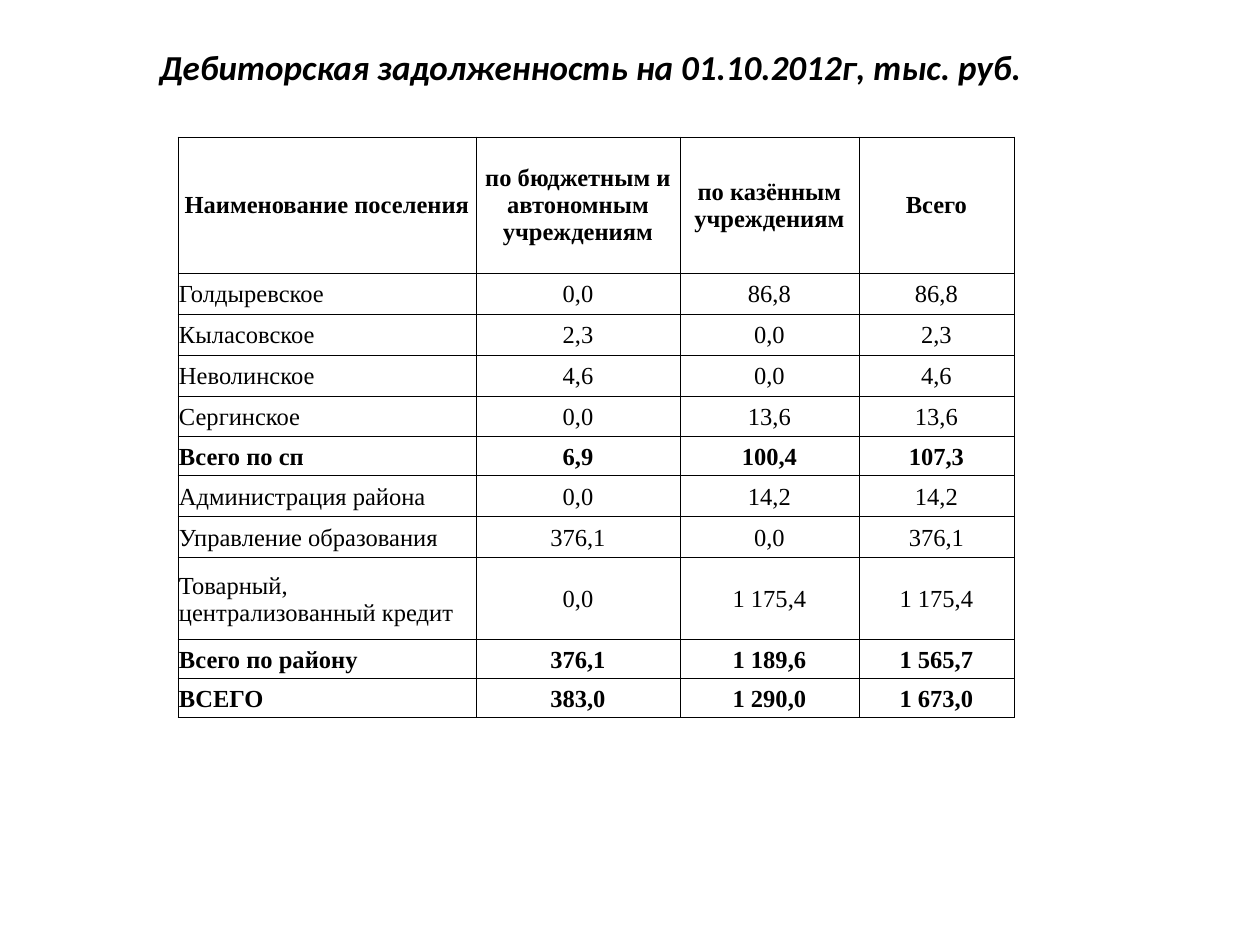
from dataclasses import dataclass

from lxml.etree import SubElement as Sub
from pptx import Presentation
from pptx.dml.color import RGBColor as RGB
from pptx.enum.text import MSO_ANCHOR as Anchor, PP_ALIGN as Align
from pptx.oxml.ns import qn
from pptx.util import Emu, Pt

SCALE = 914400 / 126  # EMU in one px


@dataclass(frozen=True)
class Theme:
    ink: str = "000000"
    paper: str = "FFFFFF"
    head_font: str = "Calibri"
    body_font: str = "Times New Roman"
    head_size: int = 20
    body_size: int = 14
    rule: float = 0.5


THEME = Theme()
TITLE = "Дебиторская задолженность на 01.10.2012г, тыс. руб."
COLS = [298, 204, 179, 155]
HEAD, LINE, SUM, TALL = 136, 41, 39, 82

# Row height, bold or not, texts
ROWS = [
    (HEAD, True, ["Наименование поселения", "по бюджетным и автономным учреждениям",
                  "по казённым учреждениям", "Всего"]),
    (LINE, False, ["Голдыревское", "0,0", "86,8", "86,8"]),
    (LINE, False, ["Кыласовское", "2,3", "0,0", "2,3"]),
    (LINE, False, ["Неволинское", "4,6", "0,0", "4,6"]),
    (LINE, False, ["Сергинское", "0,0", "13,6", "13,6"]),
    (SUM, True, ["Всего по сп", "6,9", "100,4", "107,3"]),
    (LINE, False, ["Администрация района", "0,0", "14,2", "14,2"]),
    (LINE, False, ["Управление образования", "376,1", "0,0", "376,1"]),
    (TALL, False, ["Товарный, централизованный кредит", "0,0", "1 175,4", "1 175,4"]),
    (SUM, True, ["Всего по району", "376,1", "1 189,6", "1 565,7"]),
    (SUM, True, ["ВСЕГО", "383,0", "1 290,0", "1 673,0"]),
]


def px(num):
    return Emu(round(num * SCALE))


def style(para, font, size, bold=False, slant=False):
    for run in para.runs:
        face = run.font
        face.name, face.size = font, Pt(size)
        face.bold, face.italic = bold, slant
        face.color.rgb = RGB.from_string(THEME.ink)


def add_title(slide, text, left, top, width, height):
    box = slide.shapes.add_textbox(px(left), px(top), px(width), px(height))
    frame = box.text_frame
    frame.word_wrap = True
    frame.text = text
    style(frame.paragraphs[0], THEME.head_font, THEME.head_size, True, True)


def add_rules(cell):
    props = cell._tc.get_or_add_tcPr()
    for side in ("lnL", "lnR", "lnT", "lnB"):
        edge = Sub(props, qn(f"a:{side}"), w=str(Pt(THEME.rule)))
        fill = Sub(edge, qn("a:solidFill"))
        Sub(fill, qn("a:srgbClr"), val=THEME.ink)


def fill_cell(cell, text, bold, align):
    cell.margin_left = cell.margin_right = cell.margin_top = px(1)
    cell.margin_bottom = 0
    cell.vertical_anchor = Anchor.MIDDLE
    add_rules(cell)
    cell.fill.solid()
    cell.fill.fore_color.rgb = RGB.from_string(THEME.paper)
    cell.text_frame.text = text
    para = cell.text_frame.paragraphs[0]
    para.alignment = align
    style(para, THEME.body_font, THEME.body_size, bold)


def add_grid(slide, left, top):
    high = sum(row[0] for row in ROWS)
    grid = slide.shapes.add_table(len(ROWS), len(COLS), px(left), px(top),
                                  px(sum(COLS)), px(high)).table
    grid.first_row = grid.horz_banding = False
    for col, width in zip(grid.columns, COLS):
        col.width = px(width)
    for r, (height, bold, texts) in enumerate(ROWS):
        grid.rows[r].height = px(height)
        for c, text in enumerate(texts):
            # Names below the header stand at the left
            align = Align.LEFT if r and not c else Align.CENTER
            fill_cell(grid.cell(r, c), text, bold, align)


def main():
    deck = Presentation()
    deck.slide_width, deck.slide_height = px(1260), px(945)
    slide = deck.slides.add_slide(deck.slide_layouts[6])
    add_title(slide, TITLE, 147, 39, 925, 55)
    add_grid(slide, 178, 137)
    deck.save("out.pptx")


if __name__ == "__main__":
    main()
